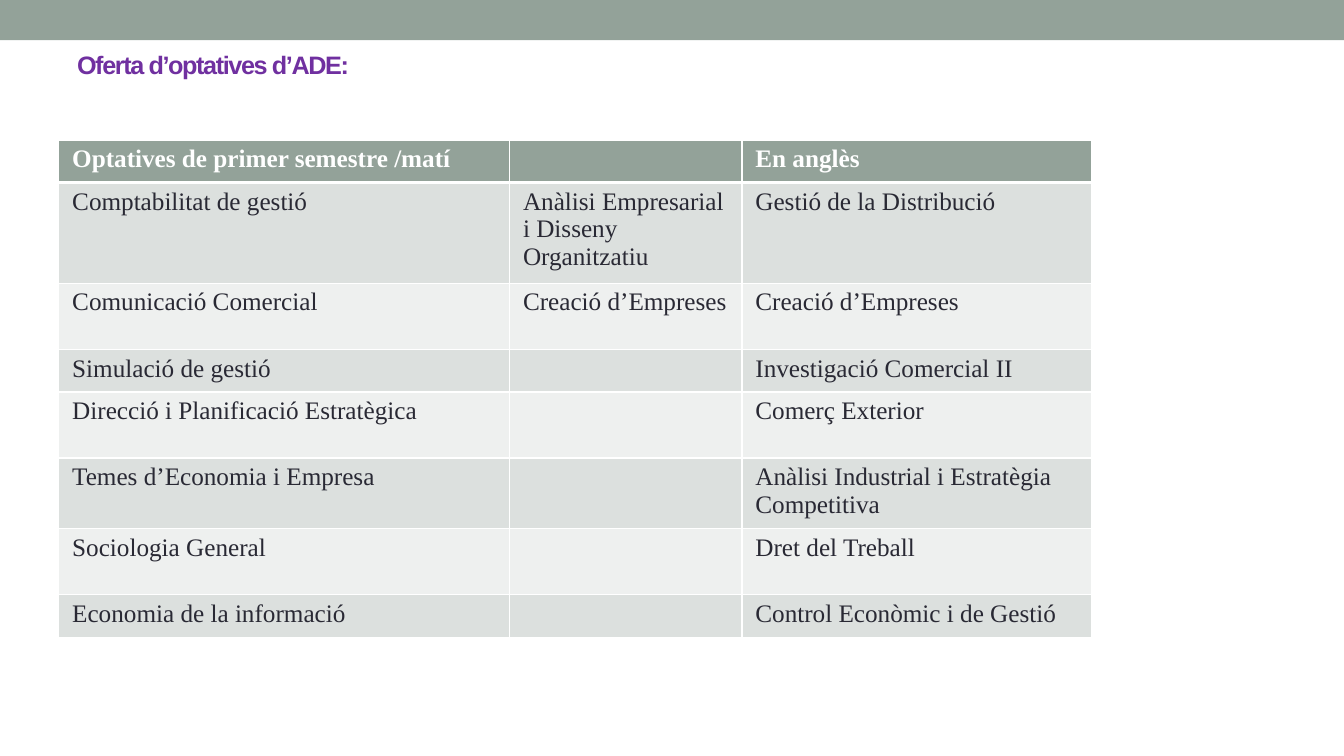
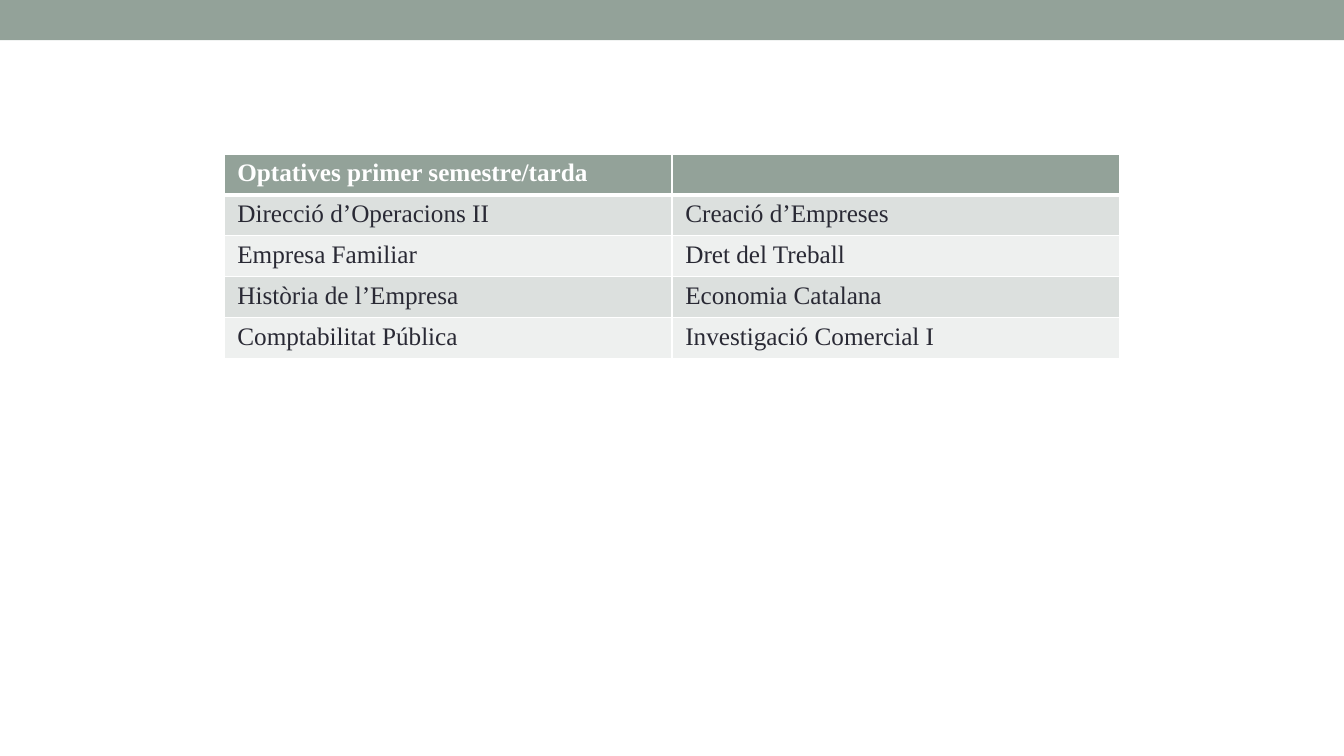
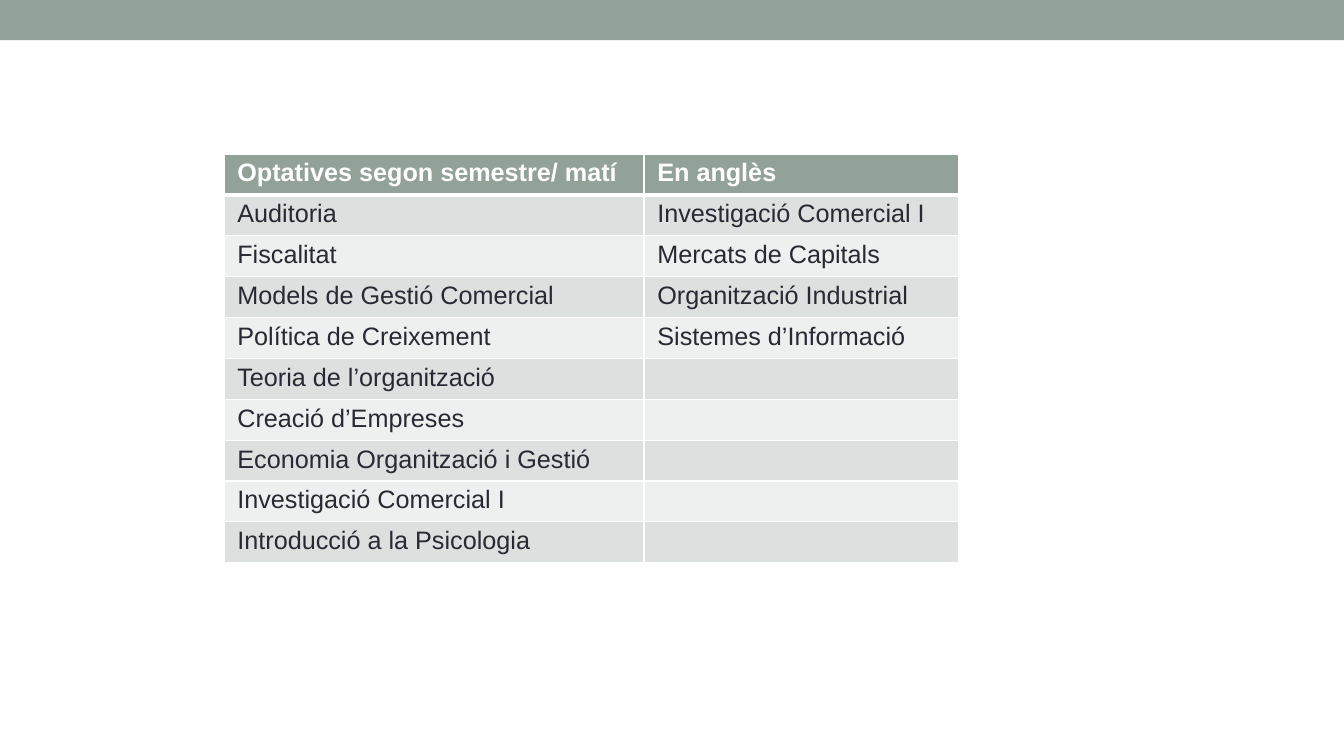
import pptx
import pptx.util
import pptx.dml.color
import pptx.enum.shapes
import pptx.enum.text
import pptx.oxml

Pt = pptx.util.Pt
SAGE = "93A299"
WHITE = "FFFFFF"
INK = "292934"
PURPLE = "7030A0"
BANDS = ["EEF0EF", "DCE0DE"]
NAMESPACE = "http://schemas.openxmlformats.org/drawingml/2006/main"


def color(hex_code):
    return pptx.dml.color.RGBColor.from_string(hex_code)


def write_text(frame, text, font="Arial", size=18, fill=INK, bold=False, spacing=0):
    frame.word_wrap = True
    run = frame.paragraphs[0].add_run()
    run.text = text
    run.font.name = font
    run.font.size = Pt(size)
    run.font.bold = bold
    run.font.color.rgb = color(fill)
    if spacing:
        run._r.get_or_add_rPr().set("spc", str(spacing * 100))


presentation = pptx.Presentation()
presentation.slide_width = Pt(960)
presentation.slide_height = Pt(540)

tables = [
    {
        "title": "Oferta d’optatives d’ADE:",
        "font": "Times New Roman",
        "left": 42,
        "top": 100,
        "columns": [322, 166, 250],
        "heights": [30.4, 66.8, 47.2, 30.4, 47.2, 47.2, 47.2, 30.4],
        "rows": [
            ["Optatives de primer semestre /matí", "", "En anglès"],
            ["Comptabilitat de gestió", "Anàlisi Empresarial i Disseny Organitzatiu", "Gestió de la Distribució"],
            ["Comunicació Comercial", "Creació d’Empreses", "Creació d’Empreses"],
            ["Simulació de gestió", "", "Investigació Comercial II"],
            ["Direcció i Planificació Estratègica", "", "Comerç Exterior"],
            ["Temes d’Economia i Empresa", "", "Anàlisi Industrial i Estratègia Competitiva"],
            ["Sociologia General", "", "Dret del Treball"],
            ["Economia de la informació", "", "Control Econòmic i de Gestió"],
        ],
    },
    {
        "title": "",
        "font": "Times New Roman",
        "left": 160,
        "top": 110,
        "columns": [320, 320],
        "heights": [29.2] * 5,
        "rows": [
            ["Optatives primer semestre/tarda", ""],
            ["Direcció d’Operacions II", "Creació d’Empreses"],
            ["Empresa Familiar", "Dret del Treball"],
            ["Història de l’Empresa", "Economia Catalana"],
            ["Comptabilitat Pública", "Investigació Comercial I"],
        ],
    },
    {
        "title": "",
        "font": "Arial",
        "left": 160,
        "top": 110,
        "columns": [300, 225],
        "heights": [29.2] * 10,
        "rows": [
            ["Optatives segon semestre/ matí", "En anglès"],
            ["Auditoria", "Investigació Comercial I"],
            ["Fiscalitat", "Mercats de Capitals"],
            ["Models de Gestió Comercial", "Organització Industrial"],
            ["Política de Creixement", "Sistemes d’Informació"],
            ["Teoria de l’organització", ""],
            ["Creació d’Empreses", ""],
            ["Economia Organització i Gestió", ""],
            ["Investigació Comercial I", ""],
            ["Introducció a la Psicologia", ""],
        ],
    },
]

for content in tables:
    slide = presentation.slides.add_slide(presentation.slide_layouts[6])
    band = slide.shapes.add_shape(
        pptx.enum.shapes.MSO_SHAPE.RECTANGLE, Pt(0), Pt(0), Pt(960), Pt(28.8)
    )
    band.shadow.inherit = False
    band.fill.solid()
    band.fill.fore_color.rgb = color(SAGE)
    band.line.fill.background()

    if content["title"]:
        title = slide.shapes.add_textbox(Pt(48), Pt(15), Pt(864), Pt(62))
        title.text_frame.vertical_anchor = pptx.enum.text.MSO_ANCHOR.MIDDLE
        write_text(title.text_frame, content["title"], fill=PURPLE, bold=True, spacing=-1)

    columns, heights = content["columns"], content["heights"]
    table = slide.shapes.add_table(
        len(heights), len(columns), Pt(content["left"]), Pt(content["top"]),
        Pt(sum(columns)), Pt(sum(heights)),
    ).table
    for column, width in zip(table.columns, columns):
        column.width = Pt(width)

    for row_index, texts in enumerate(content["rows"]):
        table.rows[row_index].height = Pt(heights[row_index])
        header = row_index == 0
        for column_index, text in enumerate(texts):
            cell = table.cell(row_index, column_index)
            cell.margin_left = cell.margin_right = Pt(9.6)
            cell.margin_top = cell.margin_bottom = Pt(3.6)
            cell.fill.solid()
            cell.fill.fore_color.rgb = color(SAGE if header else BANDS[row_index % 2])
            if text:
                write_text(cell.text_frame, text, font=content["font"],
                           fill=WHITE if header else INK, bold=header)
            thick_side = {0: "B", 1: "T"}.get(row_index)
            for position, side in enumerate("LRTB"):
                width = Pt(3 if side == thick_side else 1)
                border = pptx.oxml.parse_xml(
                    f'<a:ln{side} xmlns:a="{NAMESPACE}" w="{width}"><a:solidFill>'
                    f'<a:srgbClr val="{WHITE}"/></a:solidFill></a:ln{side}>'
                )
                cell._tc.get_or_add_tcPr().insert(position, border)

presentation.save("out.pptx")
